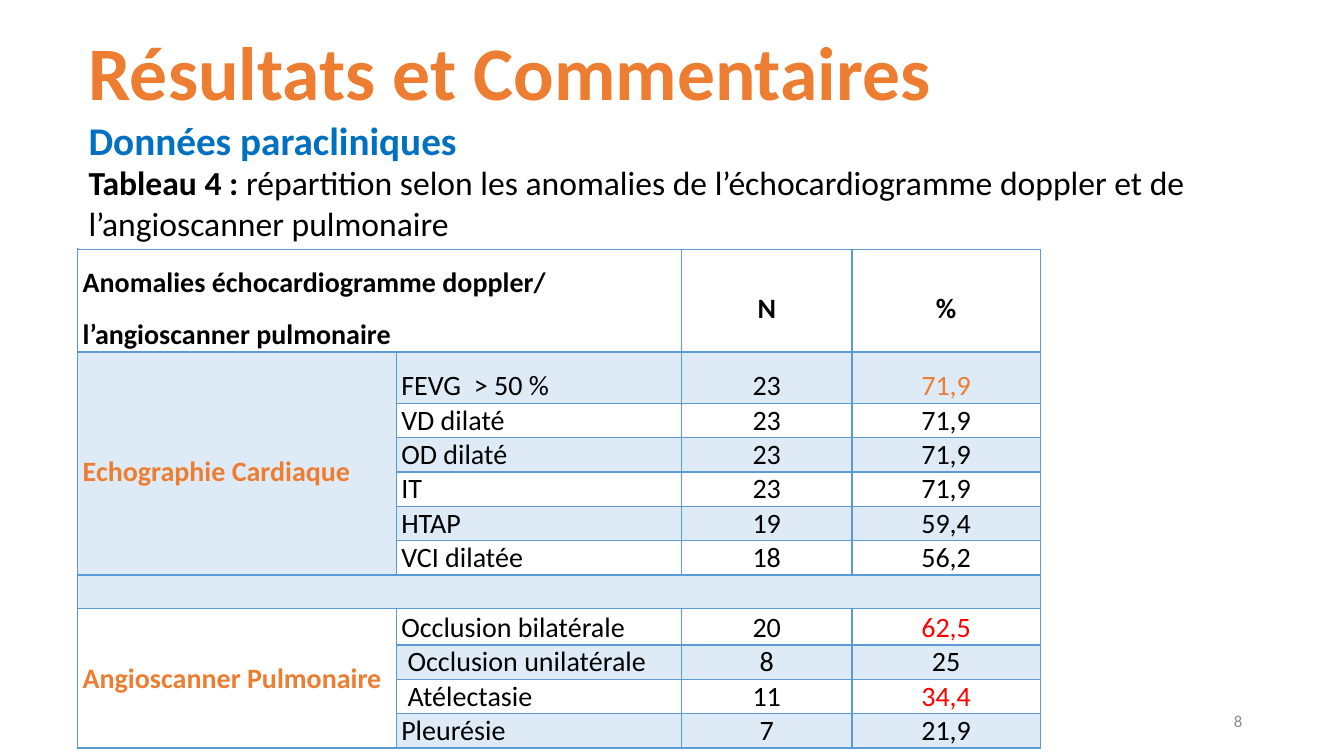
from dataclasses import dataclass

from lxml import etree
from pptx import Presentation
from pptx import util as u
from pptx.dml.color import RGBColor
from pptx.enum import shapes, text
from pptx.oxml import ns

COLORS = {
    "orange": "ED7D31", "blue": "0070C0", "black": "000000", "red": "FF0000",
    "gray": "8C8C8C", "white": "FFFFFF", "line": "5B9BD5",
}
COL_WIDTHS = [3.16, 2.83, 1.69, 1.87]
HEAD_HEIGHT = 1.0


@dataclass
class Row:
    label: str
    n: str
    pct: str
    color: str = "black"
    spacing: float | None = None
    height: float = 0.33


@dataclass
class Group:
    title: str
    spacing: float
    rows: list[Row]


GROUPS = [
    Group("Echographie Cardiaque", 1.5, [
        Row("FEVG  > 50 %", "23", "71,9", "orange", 1.5, 0.5),
        Row("VD dilaté", "23", "71,9"),
        Row("OD dilaté", "23", "71,9"),
        Row("IT", "23", "71,9"),
        Row("HTAP", "19", "59,4"),
        Row("VCI dilatée", "18", "56,2"),
    ]),
    Group("Angioscanner Pulmonaire", 1.07, [
        Row("Occlusion bilatérale", "20", "62,5", "red", 1.07, 0.36),
        Row(" Occlusion unilatérale", "8", "25"),
        Row(" Atélectasie", "11", "34,4", "red"),
        Row("Pleurésie", "7", "21,9"),
    ]),
]


def rgb(name: str) -> RGBColor:
    return RGBColor.from_string(COLORS[name])


def add_text(p, value: str, *, size: float = 20, color: str = "black",
             bold: bool = False, align=None, spacing: float | None = None) -> None:
    r = p.add_run()
    r.text = value
    r.font.name, r.font.size, r.font.bold = "Calibri", u.Pt(size), bold
    r.font.color.rgb = rgb(color)
    p.alignment = align
    p.line_spacing = spacing


def add_box(s, x: float, y: float, w: float, h: float):
    sp = s.shapes.add_textbox(u.Inches(x), u.Inches(y), u.Inches(w), u.Inches(h))
    sp.text_frame.word_wrap = True
    return sp


def format_cell(cell, shaded: bool, bottom: float = 1) -> None:
    cell.margin_left = cell.margin_right = u.Inches(0.05)
    cell.margin_top = cell.margin_bottom = 0
    cell.vertical_anchor = text.MSO_ANCHOR.MIDDLE
    if shaded:
        cell.fill.solid()
        cell.fill.fore_color.rgb = rgb("line")
    else:
        cell.fill.background()
    pr = cell._tc.get_or_add_tcPr()
    for clr in pr.iter(ns.qn("a:srgbClr")):
        etree.SubElement(clr, ns.qn("a:alpha"), val="20000")
    for i, side in enumerate("LRTB"):
        ln = etree.Element(ns.qn(f"a:ln{side}"))
        ln.set("w", str(u.Pt(bottom if side == "B" else 1)))
        fill = etree.SubElement(ln, ns.qn("a:solidFill"))
        etree.SubElement(fill, ns.qn("a:srgbClr"), val=COLORS["line"])
        pr.insert(i, ln)


def add_values(table, row: int, label: str, n: str, pct: str, *, first: int = 1,
               color: str = "black", **fmt) -> None:
    center = text.PP_ALIGN.CENTER
    add_text(table.cell(row, first).text_frame.paragraphs[0], label, **fmt)
    add_text(table.cell(row, 2).text_frame.paragraphs[0], n, align=center, **fmt)
    add_text(table.cell(row, 3).text_frame.paragraphs[0], pct, align=center,
             color=color, **fmt)


def add_results(s) -> None:
    gap_row = 1 + len(GROUPS[0].rows)
    count = gap_row + 1 + len(GROUPS[1].rows)
    table = s.shapes.add_table(count, 4, u.Inches(0.77), u.Inches(2.47),
                               u.Inches(9.55), u.Inches(4.88)).table
    table.first_row = table.horz_banding = False
    for col, width in zip(table.columns, COL_WIDTHS):
        col.width = u.Inches(width)
    for i, row in enumerate(table.rows):
        row.height = u.Inches(0.33)
        for cell in row.cells:
            format_cell(cell, i % 2 == 1, 2 if i == 0 else 1)

    table.rows[0].height = u.Inches(HEAD_HEIGHT)
    table.cell(0, 0).merge(table.cell(0, 1))
    table.cell(gap_row, 0).merge(table.cell(gap_row, 3))
    add_values(table, 0, "Anomalies échocardiogramme doppler/ l’angioscanner pulmonaire",
               "N", "%", first=0, bold=True, spacing=1.5)

    top = 1
    for group in GROUPS:
        title = table.cell(top, 0)
        title.merge(table.cell(top + len(group.rows) - 1, 0))
        add_text(title.text_frame.paragraphs[0], group.title, color="orange",
                 bold=True, spacing=group.spacing)
        for i, row in enumerate(group.rows, top):
            table.rows[i].height = u.Inches(row.height)
            add_values(table, i, row.label, row.n, row.pct, color=row.color,
                       spacing=row.spacing)
        top += len(group.rows) + 1


def add_caption(s) -> None:
    sp = s.shapes.add_shape(shapes.MSO_SHAPE.RECTANGLE, u.Inches(0.78), u.Inches(1.56),
                            u.Inches(11.76), u.Inches(0.91))
    sp.shadow.inherit = False
    sp.fill.solid()
    sp.fill.fore_color.rgb = rgb("white")
    sp.line.fill.background()
    tf = sp.text_frame
    tf.word_wrap = True
    tf.vertical_anchor = text.MSO_ANCHOR.TOP
    p = tf.paragraphs[0]
    left = text.PP_ALIGN.LEFT
    add_text(p, "Tableau 4 :", size=24, bold=True, align=left)
    add_text(p, " répartition selon les anomalies de l’échocardiogramme doppler et de "
                "l’angioscanner pulmonaire", size=24, align=left)


def main() -> None:
    prs = Presentation()
    prs.slide_width, prs.slide_height = u.Inches(13.33), u.Inches(7.5)
    s = prs.slides.add_slide(prs.slide_layouts[6])
    add_results(s)
    add_caption(s)

    tf = add_box(s, 0.78, 0.2, 11.45, 1.48).text_frame
    add_text(tf.paragraphs[0], "Résultats et Commentaires", size=54, color="orange", bold=True)
    add_text(tf.add_paragraph(), "Données paracliniques", size=28, color="blue", bold=True)

    tf = add_box(s, 9.42, 6.95, 3, 0.4).text_frame
    tf.vertical_anchor = text.MSO_ANCHOR.MIDDLE
    add_text(tf.paragraphs[0], "8", size=12, color="gray", align=text.PP_ALIGN.RIGHT)

    prs.save("out.pptx")


if __name__ == "__main__":
    main()
